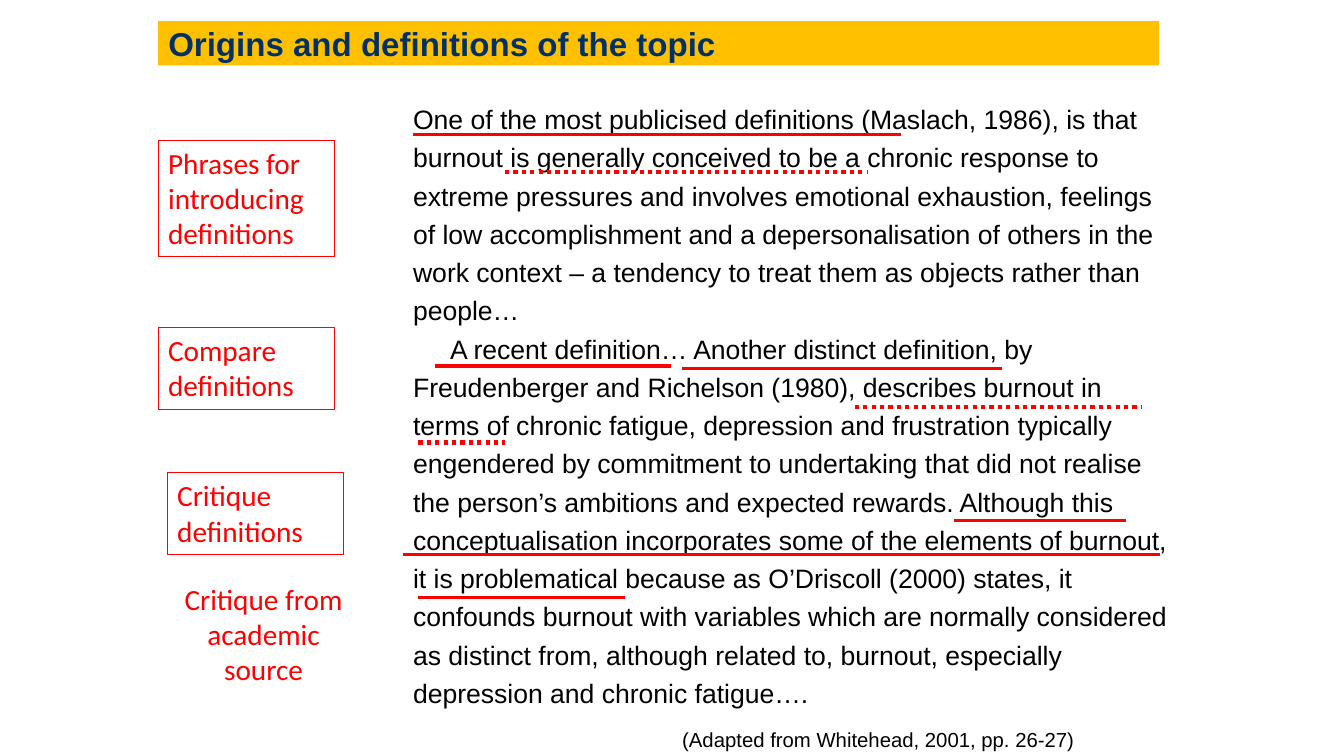
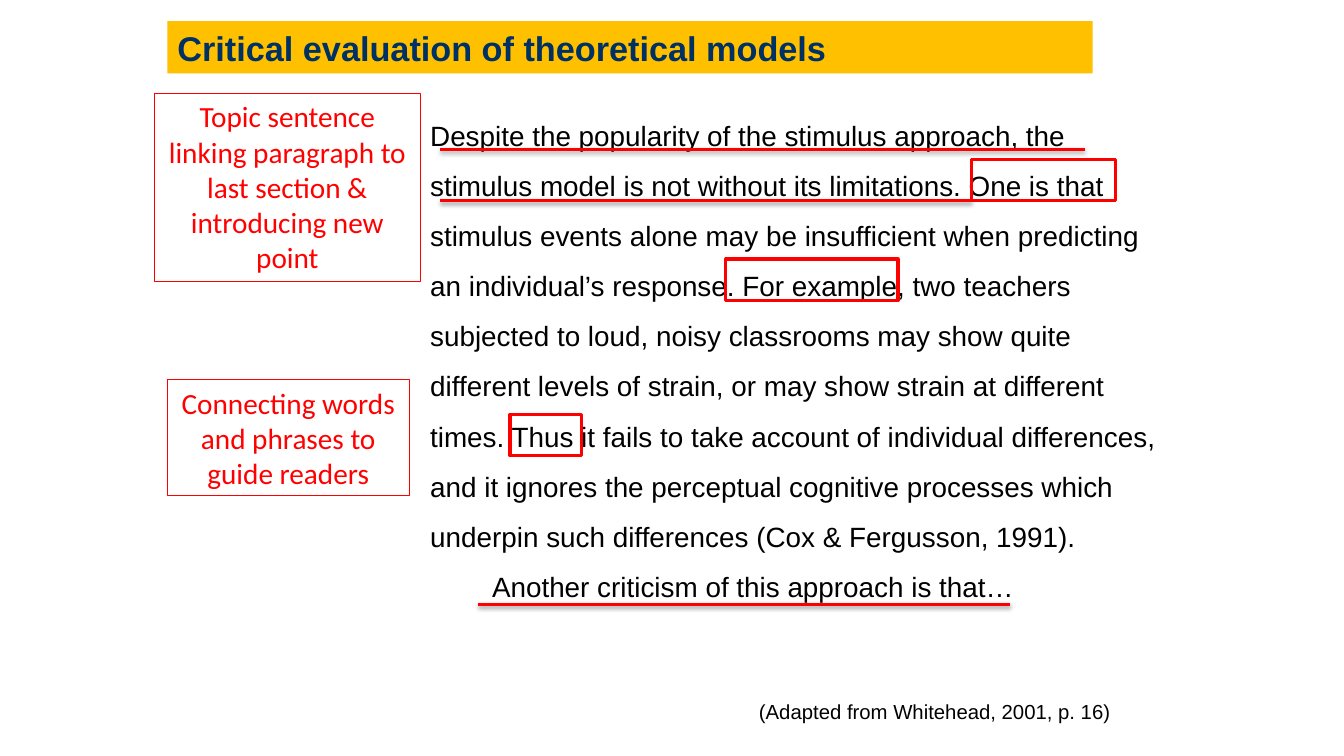
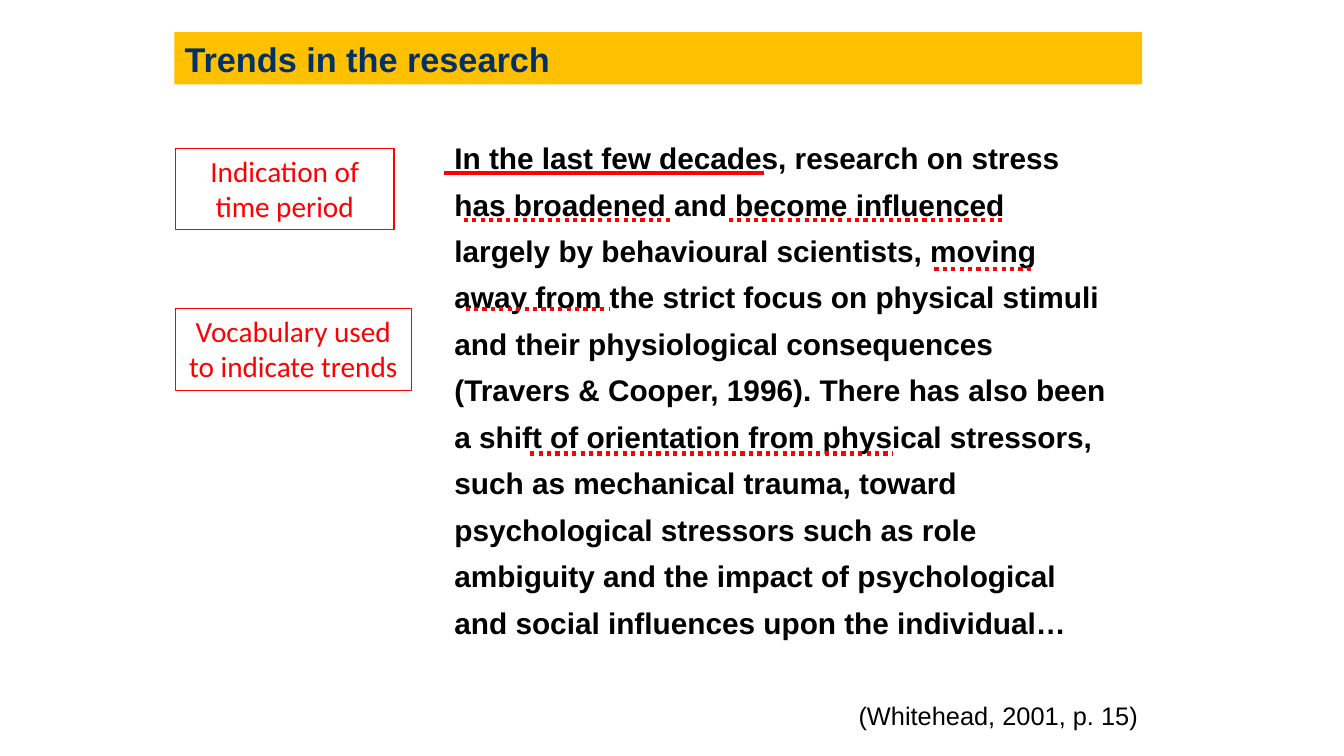
from dataclasses import dataclass

from lxml import etree
from pptx import Presentation
from pptx.dml.color import RGBColor
from pptx.enum.dml import MSO_LINE
from pptx.enum.shapes import MSO_CONNECTOR, MSO_SHAPE
from pptx.enum.text import MSO_ANCHOR, MSO_AUTO_SIZE, PP_ALIGN
from pptx.oxml.ns import qn
from pptx.util import Pt

LEFT, MID = PP_ALIGN.LEFT, PP_ALIGN.CENTER
TOP, CENTRE = MSO_ANCHOR.TOP, MSO_ANCHOR.MIDDLE
FIXED = MSO_AUTO_SIZE.NONE
RECT = MSO_SHAPE.RECTANGLE
LINE = MSO_CONNECTOR.STRAIGHT
DOTS = MSO_LINE.ROUND_DOT
TITLE_ONLY = 5


@dataclass(frozen=True)
class Theme:
    gold: RGBColor = RGBColor(0xFF, 0xC0, 0x00)
    navy: RGBColor = RGBColor(0x00, 0x31, 0x64)
    red: RGBColor = RGBColor(0xFF, 0x00, 0x00)
    black: RGBColor = RGBColor(0x00, 0x00, 0x00)
    sans: str = "Arial"
    label: str = "Calibri"
    label_size: float = 20.9
    title_small: float = 23.6
    title_size: float = 24.5
    note_small: float = 14.5
    note_size: float = 18.1
    body_small: float = 19
    body_size: float = 19.9
    body_large: float = 21.3
    thin: float = 0.75
    fine: float = 2
    firm: float = 2.25
    thick: float = 3


THEME = Theme()


def write(shape, texts, size, font, color, bold=False, align=LEFT, anchor=TOP, space=1.0, indent=0):
    frame = shape.text_frame
    frame.word_wrap = True
    frame.auto_size = FIXED
    frame.vertical_anchor = anchor
    frame.margin_left = frame.margin_right = Pt(7.2)
    frame.margin_top = frame.margin_bottom = Pt(3.6)
    for i, text in enumerate(texts):
        para = frame.add_paragraph() if i else frame.paragraphs[0]
        para.alignment = align
        para.line_spacing = space
        para.space_before = Pt(0)
        if i and indent:
            para._p.get_or_add_pPr().set("indent", str(Pt(indent)))
        run = para.add_run()
        run.text = text
        run.font.size = Pt(size)
        run.font.name = font
        run.font.bold = bold
        run.font.color.rgb = color


def frame_box(slide, place, width):
    box = slide.shapes.add_shape(RECT, *map(Pt, place))
    box.shadow.inherit = False
    box.fill.background()
    box.line.color.rgb = THEME.red
    box.line.width = Pt(width)
    return box


SLIDES = [
    {
        "title": ("Origins and definitions of the topic", (113, 15.1, 715, 31.7), THEME.title_small),
        "body": (288, 65.5, 558.7, 447.8),
        "style": {"size": THEME.body_small, "space": 1.2, "indent": 26.4},
        "texts": [
            "One of the most publicised definitions (Maslach, 1986), is that burnout is generally "
            "conceived to be a chronic response to extreme pressures and involves emotional exhaustion, "
            "feelings of low accomplishment and a depersonalisation of others in the work context – "
            "a tendency to treat them as objects rather than people…",
            "A recent definition… Another distinct definition, by Freudenberger and Richelson (1980), "
            "describes burnout in terms of chronic fatigue, depression and frustration typically "
            "engendered by commitment to undertaking that did not realise the person’s ambitions and "
            "expected rewards. Although this conceptualisation incorporates some of the elements of "
            "burnout, it is problematical because as O’Driscoll (2000) states, it confounds burnout "
            "with variables which are normally considered as distinct from, although related to, "
            "burnout, especially depression and chronic fatigue….",
        ],
        "note": ("(Adapted from Whitehead, 2001, pp. 26-27)", (480.2, 516.2, 324.7, 23.8), THEME.note_small),
        "labels": [
            (["Phrases for introducing definitions"], (113, 100.1, 126, 83.5), LEFT, True),
            (["Compare definitions"], (113, 234, 126, 58.3), LEFT, True),
            (["Critique definitions"], (119.5, 337.7, 126, 58.3), LEFT, True),
            (["Critique from academic source"], (113, 411.8, 150.5, 83.5), MID, False),
        ],
        "frames": [],
        "width": THEME.firm,
        "shade": False,
        "solid": [
            (295.2, 95.8, 643.7), (311, 261.4, 479.5), (487.4, 263.5, 715.7),
            (681.1, 371.5, 804.2), (288, 396, 828.7), (298.8, 427, 446.4),
        ],
        "dotted": [(360.7, 123.1, 619.2), (610.6, 290.9, 815), (298.8, 316.1, 360.7)],
    },
    {
        "title": ("Critical evaluation of theoretical models", (119.5, 15.1, 661, 37.4), THEME.title_size),
        "body": (300.2, 69.1, 537.1, 365.8),
        "style": {"size": THEME.body_size, "space": 1.5, "indent": 44.2},
        "texts": [
            "Despite the popularity of the stimulus approach, the stimulus model is not without its "
            "limitations. One is that stimulus events alone may be insufficient when predicting an "
            "individual’s response. For example, two teachers subjected to loud, noisy classrooms may "
            "show quite different levels of strain, or may show strain at different times. Thus it "
            "fails to take account of individual differences, and it ignores the perceptual cognitive "
            "processes which underpin such differences (Cox & Fergusson, 1991).",
            "Another criticism of this approach is that…",
        ],
        "note": ("(Adapted from Whitehead, 2001, p. 16)", (535, 496.1, 279.4, 25.2), THEME.note_small),
        "labels": [
            (["Topic sentence linking paragraph to last section &", "introducing new point"],
             (110.2, 67, 190.1, 133.9), MID, True),
            (["Connecting words and phrases to guide readers"], (119.5, 271.4, 172.8, 82.8), MID, True),
        ],
        "frames": [
            (694.1, 113.8, 103, 29.5), (518.4, 185, 123.1, 29.5), (364.3, 295.9, 51.1, 29.5),
        ],
        "width": THEME.fine,
        "shade": True,
        "solid": [(314.6, 106.6, 774.7), (314.6, 143.3, 694.1), (341.3, 431.6, 721.4)],
        "dotted": [],
    },
    {
        "title": ("Trends in the research", (124.6, 23, 691.2, 37.4), THEME.title_size),
        "body": (317.5, 88.6, 481, 373),
        "style": {"size": THEME.body_large, "space": 1.3, "bold": True},
        "texts": [
            "In the last few decades, research on stress has broadened and become influenced largely "
            "by behavioural scientists, moving away from the strict focus on physical stimuli and "
            "their physiological consequences (Travers & Cooper, 1996). There has also been a shift "
            "of orientation from physical stressors, such as mechanical trauma, toward psychological "
            "stressors such as role ambiguity and the impact of psychological and social influences "
            "upon the individual…",
        ],
        "note": ("(Whitehead, 2001, p. 15)", (606.2, 496.8, 228.2, 29.5), THEME.note_size),
        "labels": [
            (["Indication of time period"], (125.3, 105.8, 156.2, 58.3), MID, True),
            (["Vocabulary used to indicate trends"], (125.3, 220.3, 168.5, 58.3), MID, True),
        ],
        "frames": [],
        "width": THEME.thick,
        "shade": False,
        "solid": [(317.5, 123.8, 545.8)],
        "dotted": [
            (331.2, 157, 481), (520.6, 157, 718.6), (667.4, 192.2, 739.4),
            (378.7, 324, 637.2), (332.6, 221, 434.9),
        ],
    },
]

deck = Presentation()
deck.slide_width, deck.slide_height = Pt(960), Pt(540)

for page in SLIDES:
    slide = deck.slides.add_slide(deck.slide_layouts[TITLE_ONLY])

    text, place, size = page["title"]
    title = slide.shapes.title
    title.left, title.top, title.width, title.height = map(Pt, place)
    title.fill.solid()
    title.fill.fore_color.rgb = THEME.gold
    write(title, [text], size, THEME.sans, THEME.navy, bold=True, anchor=CENTRE)

    body = slide.shapes.add_textbox(*map(Pt, page["body"]))
    write(body, page["texts"], font=THEME.sans, color=THEME.black, **page["style"])

    text, place, size = page["note"]
    note = slide.shapes.add_textbox(*map(Pt, place))
    write(note, [text], size, THEME.sans, THEME.black)

    for texts, place, align, framed in page["labels"]:
        if framed:
            label = frame_box(slide, place, THEME.thin)
        else:
            label = slide.shapes.add_textbox(*map(Pt, place))
        write(label, texts, THEME.label_size, THEME.label, THEME.red, align=align)

    for place in page["frames"]:
        frame_box(slide, place, THEME.firm)

    marks = [(mark, page["width"], None) for mark in page["solid"]]
    marks += [(mark, THEME.thick, DOTS) for mark in page["dotted"]]
    for (start, level, end), width, dash in marks:
        rule = slide.shapes.add_connector(LINE, Pt(start), Pt(level), Pt(end), Pt(level))
        rule.line.color.rgb = THEME.red
        rule.line.width = Pt(width)
        if dash:
            rule.line.dash_style = dash
        effects = etree.SubElement(rule._element.spPr, qn("a:effectLst"))
        if page["shade"]:
            shade = etree.SubElement(
                effects, qn("a:outerShdw"), blurRad=str(Pt(3.1)), dist=str(Pt(1.6)),
                dir="5400000", rotWithShape="0",
            )
            tint = etree.SubElement(shade, qn("a:srgbClr"), val=str(THEME.black))
            etree.SubElement(tint, qn("a:alpha"), val="38000")

deck.save("out.pptx")
